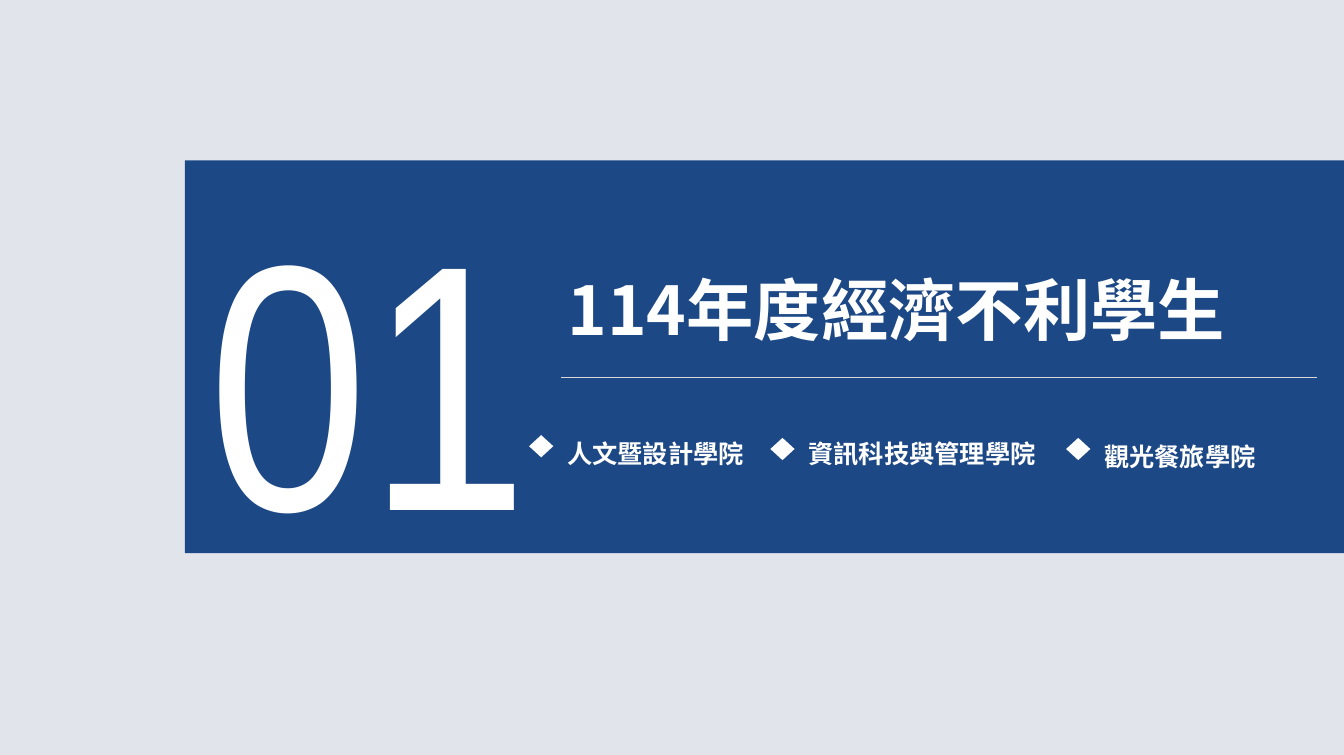
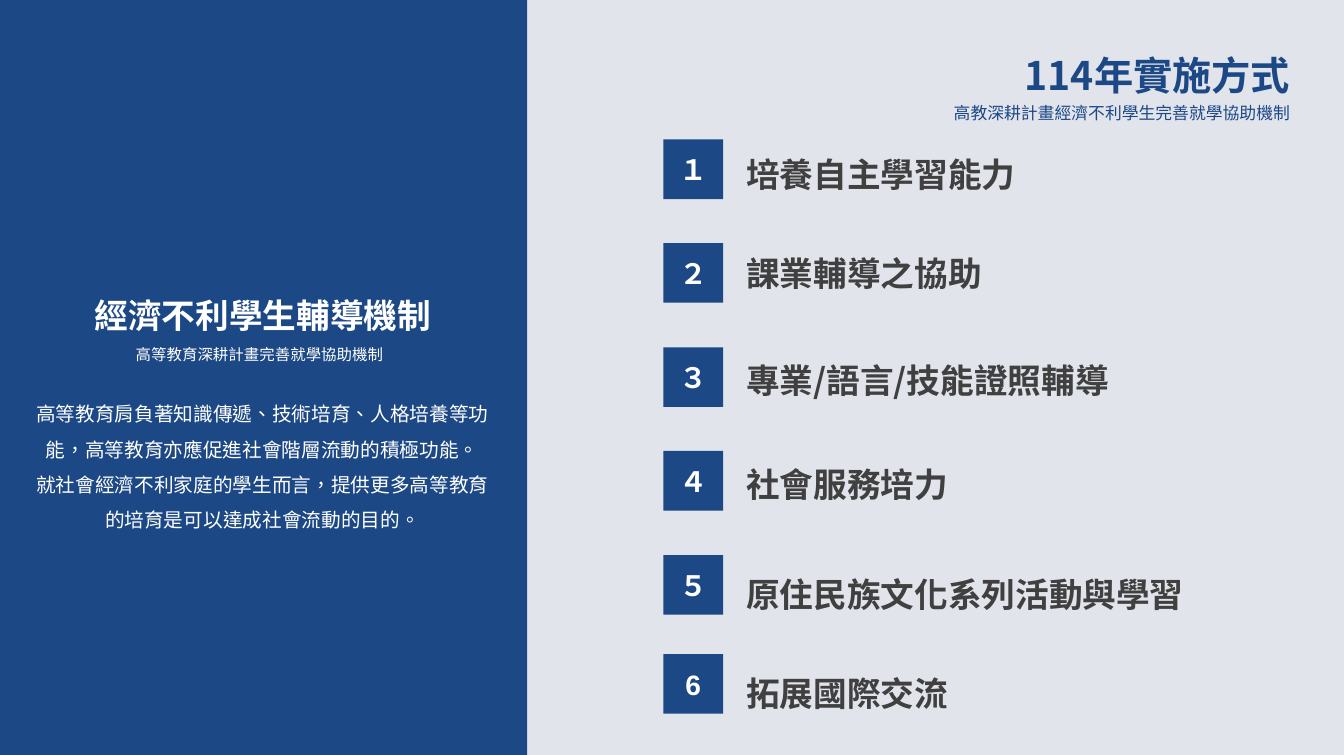
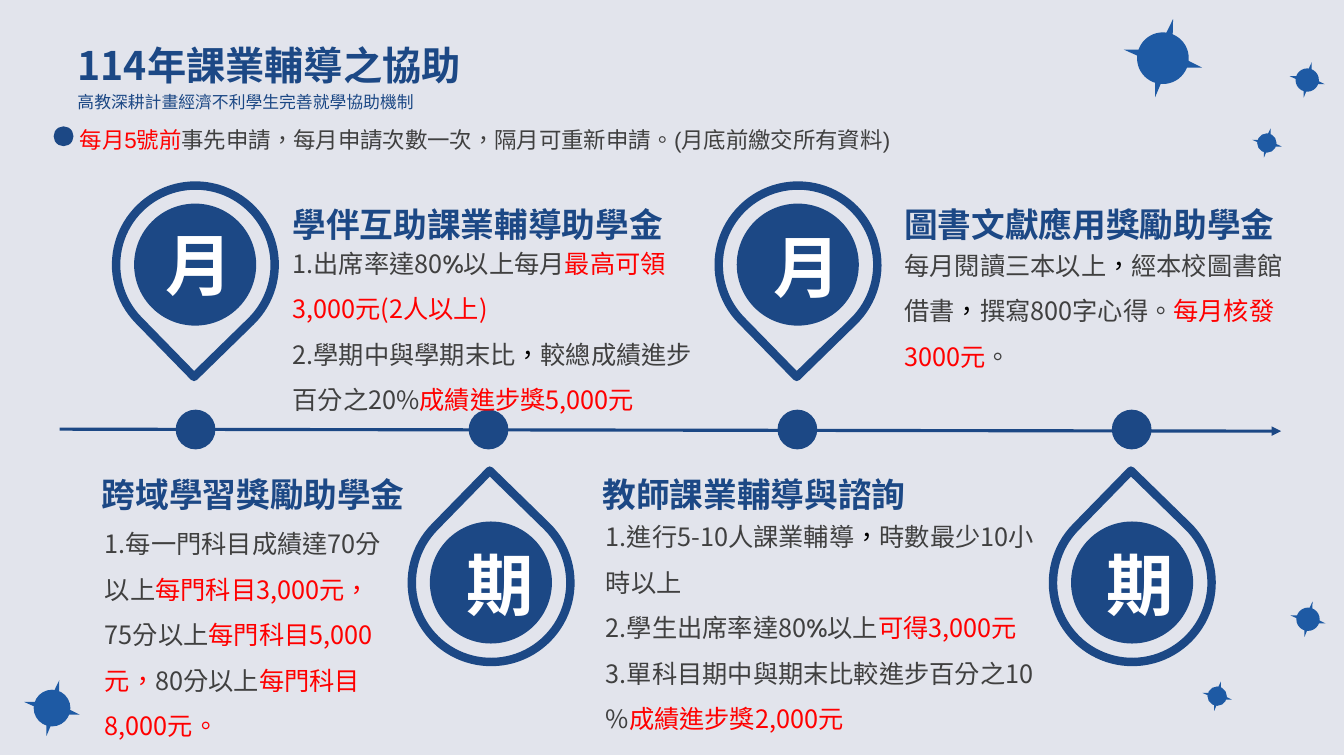
from pptx import Presentation
from pptx.dml.color import RGBColor
from pptx.enum.shapes import MSO_CONNECTOR, MSO_SHAPE
from pptx.enum.text import MSO_ANCHOR, MSO_AUTO_SIZE, PP_ALIGN
from pptx.oxml.ns import qn
from pptx.oxml.xmlchemy import OxmlElement
from pptx.util import Cm, Pt

# Shared look
PAGE_WIDTH, PAGE_HEIGHT = 33.81, 19.0
NAVY, BLUE, PALE, WHITE = "1C4885", "1E5AA4", "E2E4EC", "FFFFFF"
GREY, RULE, BLACK, SIGNAL = "404040", "D9D9D9", "000000", "FF0000"
CJK_FONT = "Noto Sans CJK SC"
LEFT, CENTER, RIGHT = PP_ALIGN.LEFT, PP_ALIGN.CENTER, PP_ALIGN.RIGHT
JUSTIFY = PP_ALIGN.JUSTIFY
RECTANGLE, OVAL = MSO_SHAPE.RECTANGLE, MSO_SHAPE.OVAL
DIAMOND, TEARDROP = MSO_SHAPE.DIAMOND, MSO_SHAPE.TEAR
STRAIGHT = MSO_CONNECTOR.STRAIGHT
TITLE_ONLY, TITLE_AND_BODY = 5, 1
SUBTITLE = "高教深耕計畫經濟不利學生完善就學協助機制"

# Text styles, each completed by BASE
BASE = {"size": 18, "bold": False, "font": CJK_FONT, "color": GREY,
        "align": LEFT, "spacing": 1.0}
PAGE_TITLE = {"size": 28, "bold": True, "color": NAVY}
PAGE_SUBTITLE = {"size": 12, "color": NAVY, "spacing": 1.5}
SECTION_TITLE = {"size": 48, "bold": True, "color": WHITE, "align": JUSTIFY}
SECTION_NUMBER = {"size": 250, "font": "Arial Narrow", "color": WHITE,
                  "align": CENTER}
COLLEGE = {"bold": True, "color": WHITE, "spacing": 1.5}
PANEL_TITLE = {"size": 24, "bold": True, "color": WHITE, "align": CENTER}
PANEL_SUBTITLE = {"size": 11, "color": WHITE, "align": CENTER, "spacing": 1.5}
PANEL_BODY = {**PANEL_SUBTITLE, "size": 14}
BADGE = {"size": 20, "bold": True, "font": "Arial", "color": WHITE,
         "align": CENTER}
MEASURE = {"size": 24, "bold": True, "spacing": 1.5}
GRANT_TITLE = {**MEASURE, "color": NAVY}
GRANT_BODY = {"spacing": 1.5}
PIN_LABEL = {**BADGE, "size": 48}
NOTICE = {"size": 16, "font": "Arial", "spacing": 1.25}

# Span overrides
RED = {"color": SIGNAL}
COMMA = ("，", {"font": "Calibri", "color": BLACK})
PERCENT = ("%", {"font": "Cabin", "bold": True})

# Star outline as shares of its size
STAR = [(0.63, 0), (0.62, 0.43), (1, 0.62), (0.56, 0.62),
        (0.4, 1), (0.4, 0.57), (0, 0.39), (0.44, 0.39)]


def rgb(code):
    return RGBColor.from_string(code)


def lengths(*values):
    return [Cm(value) for value in values]


# Text
def write(box, paragraphs, style):
    """Fill a shape; a paragraph is a string or a list of strings and (text, overrides)."""
    look = {**BASE, **style}
    frame = box.text_frame
    frame.word_wrap = True
    frame.auto_size = MSO_AUTO_SIZE.NONE
    for index, content in enumerate(paragraphs):
        para = frame.paragraphs[0] if index == 0 else frame.add_paragraph()
        layout = {"alignment": look["align"], "line_spacing": look["spacing"],
                  "space_before": Pt(0)}
        for name, value in layout.items():
            setattr(para, name, value)
        for part in [content] if isinstance(content, str) else content:
            text, overrides = (part, {}) if isinstance(part, str) else part
            add_span(para, text, {**look, **overrides})


def add_span(para, text, look):
    span = para.add_run()
    span.text = text
    values = {"size": Pt(look["size"]), "bold": look["bold"],
              "name": look["font"]}
    for name, value in values.items():
        setattr(span.font, name, value)
    span.font.color.rgb = rgb(look["color"])
    properties = span._r.get_or_add_rPr()
    properties.set("lang", "zh-TW")
    east_asian = OxmlElement("a:ea")
    east_asian.set("typeface", CJK_FONT)
    properties.append(east_asian)


def add_text(page, place, paragraphs, style):
    write(page.shapes.add_textbox(*lengths(*place)), paragraphs, style)


def fill_placeholder(box, place, paragraphs, style):
    """Move a placeholder to the front and fill it without bullets."""
    box.element.getparent().append(box.element)
    sides = zip(("left", "top", "width", "height"), lengths(*place))
    for name, value in sides:
        setattr(box, name, value)
    box.text_frame.vertical_anchor = MSO_ANCHOR.TOP
    write(box, paragraphs, style)
    for para in box.text_frame.paragraphs:
        properties = para._p.get_or_add_pPr()
        for name in ("marL", "indent"):
            properties.set(name, "0")
        properties.append(OxmlElement("a:buNone"))


def add_heading(page, title, left, top, align):
    width = 14.68
    fill_placeholder(page.shapes.title, (left, top, width, 1.45), [title],
                     {**PAGE_TITLE, "align": align})
    add_text(page, (left, top + 1.03, width, 1), [SUBTITLE],
             {**PAGE_SUBTITLE, "align": align})


# Shapes
def paint(shape, fill):
    shape.shadow.inherit = False
    shape.fill.solid()
    shape.fill.fore_color.rgb = rgb(fill)
    shape.line.fill.background()


def add_solid(page, kind, place, fill):
    shape = page.shapes.add_shape(kind, *lengths(*place))
    paint(shape, fill)
    return shape


def add_line(page, ends, color, width, arrow=False):
    line = page.shapes.add_connector(STRAIGHT, *lengths(*ends))
    line.line.color.rgb = rgb(color)
    line.line.width = Pt(width)
    line._element.spPr.append(OxmlElement("a:effectLst"))
    if arrow:
        tip = OxmlElement("a:tailEnd")
        tip.set("type", "triangle")
        line._element.spPr.find(qn("a:ln")).append(tip)


def add_pin(page, left, top, rotation):
    drop = page.shapes.add_shape(TEARDROP, *lengths(left, top, 3.99, 3.99))
    drop.shadow.inherit = False
    drop.rotation = rotation
    drop.fill.background()
    drop.line.color.rgb = rgb(NAVY)
    drop.line.width = Pt(6)
    drop._element.spPr.find(qn("a:ln")).append(OxmlElement("a:round"))
    disc = add_solid(page, OVAL, (left + 0.49, top + 0.49, 3, 3), NAVY)
    disc.line.color.rgb = rgb(NAVY)
    disc.line.width = Pt(2)


def add_star(page, left, top, size):
    corners = [lengths(left + x * size, top + y * size) for x, y in STAR]
    outline = page.shapes.build_freeform(*corners[0])
    outline.add_line_segments(corners[1:], close=True)
    paint(outline.convert_to_shape(), BLUE)
    inset, width = 0.17 * size, 0.66 * size
    add_solid(page, OVAL, (left + inset, top + inset, width, width), BLUE)


# Slides
def add_page(deck, layout):
    return deck.slides.add_slide(deck.slide_layouts[layout])


def build_section(deck):
    page = add_page(deck, TITLE_ONLY)
    add_solid(page, RECTANGLE, (4.65, 4.04, PAGE_WIDTH - 4.65, 9.88), NAVY)
    fill_placeholder(page.shapes.title, (14.02, 6.63, 18.85, 2.31),
                     ["114年度經濟不利學生"], SECTION_TITLE)
    add_line(page, (14.12, 9.5, 33.12, 9.5), RULE, 0.75)
    colleges = [
        ("人文暨設計學院", 13.31, 10.95, 10.52),
        ("資訊科技與管理學院", 19.38, 11.02, 10.52),
        ("觀光餐旅學院", 26.82, 11.02, 10.59),
    ]
    for name, left, marker_top, text_top in colleges:
        add_text(page, (left + 0.71, text_top, 6.38, 1.42), [name], COLLEGE)
        add_solid(page, DIAMOND, (left, marker_top, 0.61, 0.56), WHITE)
    add_text(page, (4.6, 3.91, 9.32, 10.95), ["01"], SECTION_NUMBER)


def build_measures(deck):
    page = add_page(deck, TITLE_AND_BODY)
    add_heading(page, "114年實施方式", 18.03, 1.17, RIGHT)

    # Left panel
    add_solid(page, RECTANGLE, (0, 0, 13.26, PAGE_HEIGHT), NAVY)
    add_text(page, (0.97, 7.29, 11.28, 1.27), ["經濟不利學生輔導機制"],
             PANEL_TITLE)
    add_text(page, (1.96, 8.33, 9.14, 0.97),
             ["高等教育深耕計畫完善就學協助機制"], PANEL_SUBTITLE)
    fill_placeholder(page.placeholders[1], (0.51, 9.7, 12.19, 3.84), [
        "高等教育肩負著知識傳遞、技術培育、人格培養等功能，"
        "高等教育亦應促進社會階層流動的積極功能。",
        "就社會經濟不利家庭的學生而言，"
        "提供更多高等教育的培育是可以達成社會流動的目的。",
    ], PANEL_BODY)

    # Numbered measures
    measures = [
        ("１", "培養自主學習能力", 3.51, 3.25),
        ("２", "課業輔導之協助", 6.12, 5.74),
        ("３", "專業/語言/技能證照輔導", 8.74, 8.43),
        ("４", "社會服務培力", 11.35, 11.05),
        ("５", "原住民族文化系列活動與學習", 13.97, 13.82),
        ("6", "拓展國際交流", 16.46, 16.31),
    ]
    for number, label, badge_top, label_top in measures:
        badge = add_solid(page, RECTANGLE, (16.69, badge_top, 1.5, 1.5), NAVY)
        write(badge, [number], BADGE)
        add_text(page, (18.52, label_top, 13.77, 1.8), [label], MEASURE)


def build_tutoring(deck):
    page = add_page(deck, TITLE_AND_BODY)

    # Timeline: label, pin, label place and dot
    add_line(page, (1.5, 10.8, 32.23, 10.85), NAVY, 2.25, arrow=True)
    down, up = (4.67, 135.7), (12.67, 314.3)
    pins = [
        ("月", 2.92, down, 3.91, 5.49, 4.42),
        ("期", 10.36, up, 11.48, 13.54, 11.79),
        ("月", 18.08, down, 19.2, 5.54, 19.56),
        ("期", 26.49, up, 27.58, 13.54, 27.97),
    ]
    for label, left, (top, rotation), label_left, label_top, dot_left in pins:
        add_solid(page, OVAL, (dot_left, 10.31, 1, 1), NAVY)
        add_pin(page, left, top, rotation)
        add_text(page, (label_left, label_top, 1.85, 2.31), [label], PIN_LABEL)

    # Grants: title, its place, body place, body paragraphs
    grants = [
        ("學伴互助課業輔導助學金", (7.11, 4.5), (7.11, 5.74, 10.8, 4.88), [
            ["1.出席率達80", PERCENT, "以上每月", ("最高可領3,000元(2人以上)", RED)],
            ["2.學期中與學期末比", COMMA, "較總成績進步百分之20%",
             ("成績進步獎5,000元", RED)],
        ]),
        ("圖書文獻應用獎勵助學金", (22.5, 4.5), (22.5, 5.79, 10.19, 3.58), [
            ["每月閱讀三本以上", COMMA, "經本校圖書館借書", COMMA,
             "撰寫800字心得。", ("每月核發3000元", RED), "。"],
        ]),
        ("跨域學習獎勵助學金", (2.31, 11.3), (2.39, 12.8, 7.72, 6.02), [
            ["1.每一門科目成績達70分以上", ("每門科目3,000元，", RED),
             "75分以上", ("每門科目5,000元，", RED),
             "80分以上", ("每門科目8,000元。", RED)],
        ]),
        ("教師課業輔導與諮詢", (14.91, 11.3), (14.99, 12.62, 11.73, 6.02), [
            ["1.進行5-10人課業輔導", COMMA, "時數最少10小時以上"],
            ["2.學生出席率達80", PERCENT, "以上", ("可得3,000元", RED)],
            ["3.單科目期中與期末比較進步百分之10 %", ("成績進步獎2,000元", RED)],
        ]),
    ]
    for title, title_place, body_place, body in grants:
        add_text(page, body_place, body, GRANT_BODY)
        add_text(page, (*title_place, 10.13, 1.63), [title], GRANT_TITLE)

    # Heading and notice
    add_solid(page, OVAL, (1.35, 3.18, 0.5, 0.5), NAVY)
    add_heading(page, "114年課業輔導之協助", 1.7, 0.91, LEFT)
    fill_placeholder(page.placeholders[1], (1.75, 2.87, 22.1, 1.12), [
        [("每月5號前", RED),
         "事先申請，每月申請次數一次，隔月可重新申請。(月底前繳交所有資料)"],
    ], NOTICE)

    # Stars: left, top, size
    stars = [(28.27, 0.48, 1.97), (32.44, 1.57, 0.89), (32.46, 15.14, 0.89),
             (0.61, 17.12, 1.4), (30.25, 17.15, 0.74), (31.5, 3.23, 0.74)]
    for star in stars:
        add_star(page, *star)


def main():
    deck = Presentation()
    deck.slide_width, deck.slide_height = lengths(PAGE_WIDTH, PAGE_HEIGHT)
    backdrop = deck.slide_master.background.fill
    backdrop.solid()
    backdrop.fore_color.rgb = rgb(PALE)
    build_section(deck)
    build_measures(deck)
    build_tutoring(deck)
    deck.save("out.pptx")


if __name__ == "__main__":
    main()
